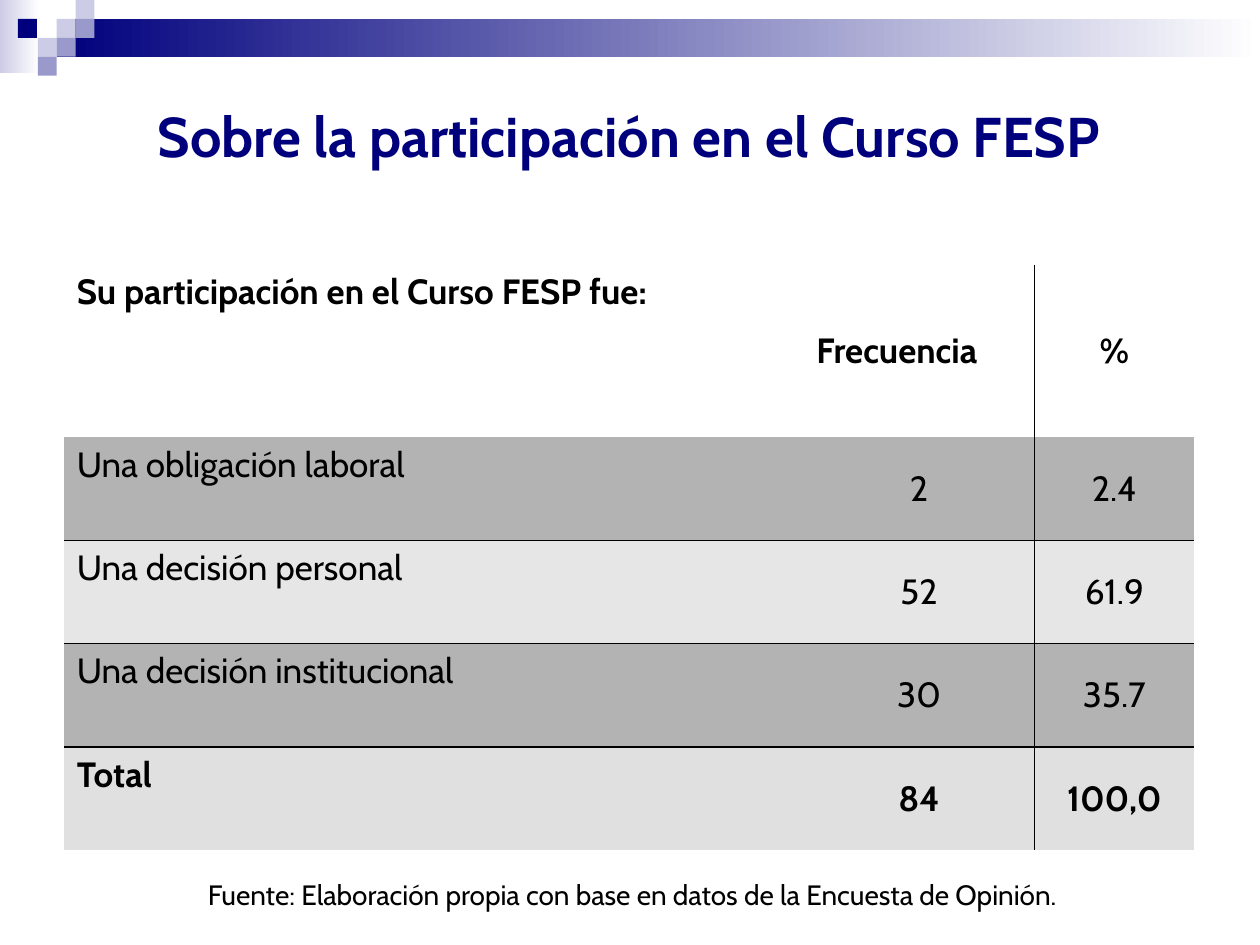
from lxml import etree
from pptx import Presentation
from pptx import util as u
from pptx.dml.color import RGBColor
from pptx.enum import shapes, text
from pptx.oxml import ns

NAVY, MID, PALE, WHITE, BLACK = "00007D", "9999CC", "CCCCE6", "FFFFFF", "000000"


def tint(spot, code):
    spot.rgb = RGBColor.from_string(code)


def write(frame, words, look, align):
    frame.text = words
    para = frame.paragraphs[0]
    para.alignment = align
    for key, val in look.items():
        if key == "color":
            tint(para.font.color, val)
        else:
            setattr(para.font, key, val)
    return para


deck = Presentation()
deck.slide_width, deck.slide_height = u.Inches(10), u.Inches(7.5)
slide = deck.slides.add_slide(deck.slide_layouts[5])
unit = u.Inches(0.15)
left, mid = text.PP_ALIGN.LEFT, text.PP_ALIGN.CENTER

blocks = [
    (0, 0, 2.07, 3.87, [PALE, WHITE]),
    (3, 1, 63.67, 2, [NAVY, WHITE]),
    (3, 1, 1, 1, [PALE]),
    (4, 0, 1, 1, [PALE]),
    (4, 1, 1, 1, [MID]),
    (2, 2, 1, 1, [PALE]),
    (0.95, 1, 1, 1, [NAVY]),
    (3, 2, 1, 1, [MID]),
    (2, 3, 1, 1, [MID]),
]
for col, row, wide, high, tones in blocks:
    place = [int(n * unit) for n in (col, row, wide, high)]
    block = slide.shapes.add_shape(shapes.MSO_SHAPE.RECTANGLE, *place)
    block.shadow.inherit = False
    block.line.fill.background()
    if len(tones) == 1:
        block.fill.solid()
        tint(block.fill.fore_color, tones[0])
    else:
        block.fill.gradient()
        block.fill.gradient_angle = 0
        for stop, tone in zip(block.fill.gradient_stops, tones):
            tint(stop.color, tone)

base = {"name": "Cabin", "size": u.Pt(20), "bold": False, "color": BLACK}
title = slide.shapes.title
spots = {"left": 0.35, "top": 0.76, "width": 9.29, "height": 0.63}
for key, val in spots.items():
    setattr(title, key, u.Inches(val))
title.text_frame.vertical_anchor = text.MSO_ANCHOR.MIDDLE
write(title.text_frame, "Sobre la participación en el Curso FESP",
      base | {"size": u.Pt(32), "bold": True, "color": NAVY}, mid)

rows = [
    ("Su participación en el Curso FESP fue:", "Frecuencia", "%"),
    ("Una obligación laboral", "2", "2.4"),
    ("Una decisión personal", "52", "61.9"),
    ("Una decisión institucional", "30", "35.7"),
    ("Total", "84", "100,0"),
]
fills = [WHITE, "B3B3B3", "E6E6E6", "B3B3B3", "E0E0E0"]
wides, highs = [5.87, 1.83, 1.27], [1.37] + [0.82] * 4
last = len(rows) - 1
frame = slide.shapes.add_table(len(rows), len(wides), u.Inches(0.51), u.Inches(2.1),
                               u.Inches(sum(wides)), u.Inches(sum(highs)))
table = frame.table
table.first_row = table.horz_banding = False
for col, wide in zip(table.columns, wides):
    col.width = u.Inches(wide)
for row, high in zip(table.rows, highs):
    row.height = u.Inches(high)

for r, line in enumerate(rows):
    for c, words in enumerate(line):
        cell = table.cell(r, c)
        props = cell._tc.get_or_add_tcPr()
        side = 1 if r == 0 else 0.75
        rule = {n: 1 if c == 0 and n == last else 0.75 for n in range(2, last + 1)}
        edges = {
            "L": side if c == 2 else 0,
            "R": side if c == 1 else 0,
            "T": rule.get(r, 0),
            "B": rule.get(r + 1, 0),
        }
        for edge, size in edges.items():
            ln = etree.SubElement(props, ns.qn("a:ln" + edge), w=str(u.Pt(size)))
            if size:
                ink = etree.SubElement(ln, ns.qn("a:solidFill"))
                etree.SubElement(ink, ns.qn("a:srgbClr"), val=BLACK)
            else:
                etree.SubElement(ln, ns.qn("a:noFill"))
        cell.fill.solid()
        tint(cell.fill.fore_color, fills[r])
        cell.vertical_anchor = text.MSO_ANCHOR.MIDDLE if c else text.MSO_ANCHOR.TOP
        align = left if c == 0 or (r, c) == (0, 1) else mid
        para = write(cell.text_frame, words, base | {"bold": r in (0, last)}, align)
        hang = para._p.get_or_add_pPr()
        hang.set("marL", str(u.Inches(0.38)))
        hang.set("indent", str(-u.Inches(0.38)))

note = slide.shapes.add_textbox(u.Inches(1.33), u.Inches(6.91), u.Inches(7.38), u.Inches(0.37))
note.text_frame.word_wrap = False
note.text_frame.vertical_anchor = text.MSO_ANCHOR.MIDDLE
write(note.text_frame, "Fuente: Elaboración propia con base en datos de la Encuesta de Opinión.",
      base | {"size": u.Pt(16)}, mid)

deck.save("out.pptx")
